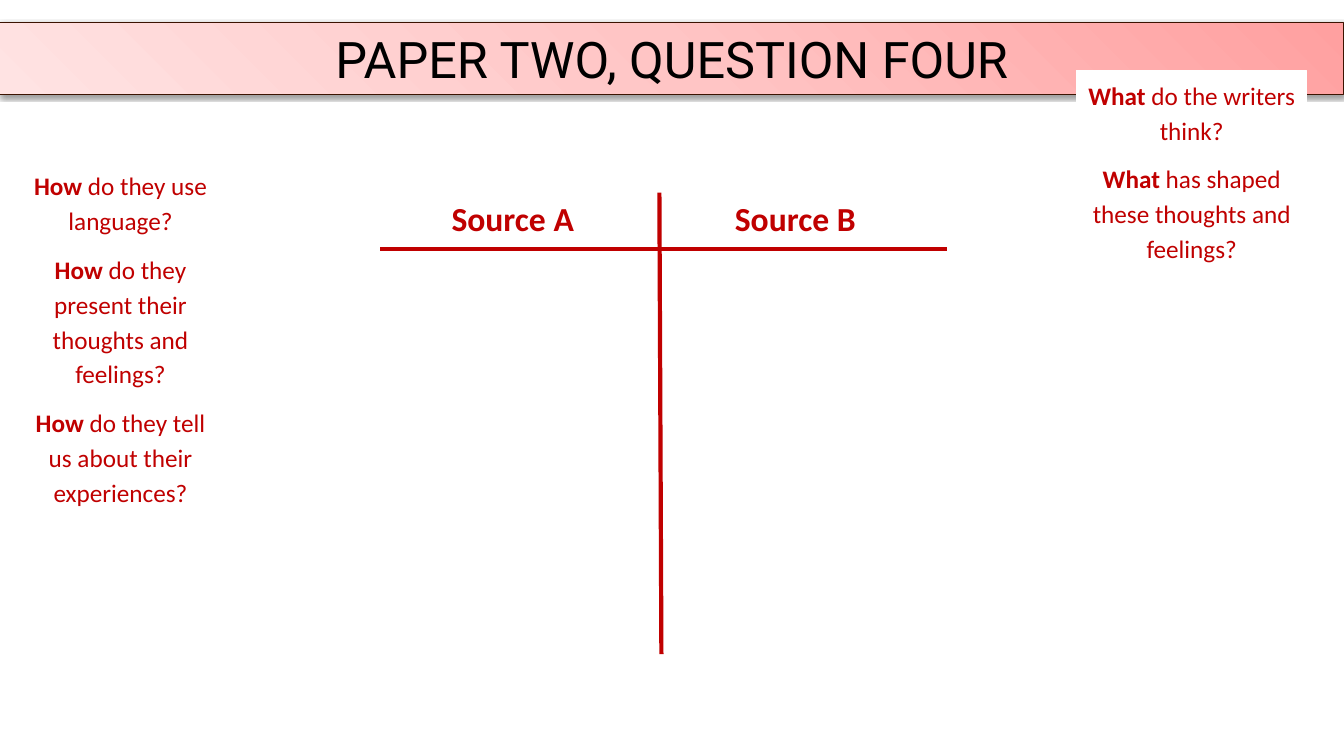
"""Build the Paper Two, Question Four comparison slide."""
import pptx
import pptx.dml.color
import pptx.enum.shapes
import pptx.enum.text
import pptx.oxml
import pptx.oxml.ns
import pptx.util
from lxml import etree

Inches = pptx.util.Inches
Pt = pptx.util.Pt
Align = pptx.enum.text.PP_ALIGN
Anchor = pptx.enum.text.MSO_ANCHOR

RED, WHITE, BLACK, BROWN = "C00000", "FFFFFF", "000000", "3C1301"
TITLE = "PAPER TWO, QUESTION FOUR"
TITLE_AREA = (0, 0.22, 13.33, 0.72)
GRADIENT = [(0, "FFA0A0"), (50, "FFC5C5"), (100, "FFE3E3")]
CHART_LINES = [(6.54, 1.91, 6.56, 6.49), (3.77, 2.47, 9.39, 2.47)]
HEADINGS = [("Source A", 4.38), ("Source B", 7.19)]
HEADING_TOP, HEADING_WIDTH, HEADING_HEIGHT = 1.91, 1.99, 0.5
QUESTIONS = [
    ((0.17, 1.6, 2.05, 3.48), "How", [
        " do they use language?",
        " do they present their thoughts and feelings?",
        " do they tell us about their experiences?",
    ]),
    ((10.68, 0.7, 2.28, 2.01), "What", [
        " do the writers think?",
        " has shaped these thoughts and feelings?",
    ]),
]

TITLE_FONT = {"name": "Roboto", "size": Pt(36), "bold": False}
HEADING_FONT = {"name": "Calibri", "size": Pt(24), "bold": True}
STRONG_FONT = {"name": "Calibri", "size": Pt(18), "bold": True}
PLAIN_FONT = {**STRONG_FONT, "bold": False}
CENTRED = {"alignment": Align.CENTER}
LEFT = {"alignment": Align.LEFT}
QUESTION_FORMAT = {**CENTRED, "line_spacing": 1.15, "space_after": Pt(10)}


def color(value):
    return pptx.dml.color.RGBColor.from_string(value)


def apply(target, values):
    for name, value in values.items():
        setattr(target, name, value)


def add_box(page, area, line_color, line_width, anchor, paragraphs, layout, text_color):
    box = page.shapes.add_shape(
        pptx.enum.shapes.MSO_SHAPE.RECTANGLE, *map(Inches, area))
    box.shadow.inherit = False
    box.line.color.rgb = color(line_color)
    box.line.width = Pt(line_width)
    frame = box.text_frame
    apply(frame, {"word_wrap": True, "vertical_anchor": anchor})
    for index, spans in enumerate(paragraphs):
        para = frame.add_paragraph() if index else frame.paragraphs[0]
        apply(para, layout)
        for text, font in spans:
            span = para.add_run()
            span.text = text
            apply(span.font, font)
            span.font.color.rgb = color(text_color)
    return box


def add_title(page):
    banner = add_box(page, TITLE_AREA, BROWN, 0.75, Anchor.MIDDLE,
                     [[(TITLE, TITLE_FONT)]], CENTRED, BLACK)
    banner.fill.gradient()
    banner.fill.gradient_angle = 225
    properties = banner.element.spPr
    stops = properties.find(".//" + pptx.oxml.ns.qn("a:gsLst"))
    for stop in list(stops):
        stops.remove(stop)
    for position, shade in GRADIENT:
        stop = etree.SubElement(stops, pptx.oxml.ns.qn("a:gs"), pos=str(position * 1000))
        etree.SubElement(stop, pptx.oxml.ns.qn("a:srgbClr"), val=shade)
    effects = properties.find(pptx.oxml.ns.qn("a:effectLst"))
    shadow = etree.SubElement(
        effects, pptx.oxml.ns.qn("a:outerShdw"), blurRad=str(Pt(3.1)),
        dist=str(Pt(1.6)), dir="5400000", rotWithShape="0")
    tint = etree.SubElement(shadow, pptx.oxml.ns.qn("a:srgbClr"), val=BLACK)
    etree.SubElement(tint, pptx.oxml.ns.qn("a:alpha"), val="38000")


def add_line(page, ends):
    line = page.shapes.add_connector(
        pptx.enum.shapes.MSO_CONNECTOR.STRAIGHT, *map(Inches, ends))
    line.line.color.rgb = color(RED)
    line.line.width = Pt(3)
    etree.SubElement(line.element.spPr, pptx.oxml.ns.qn("a:effectLst"))


def main():
    deck = pptx.Presentation()
    apply(deck, {"slide_width": Inches(13.33), "slide_height": Inches(7.5)})
    page = deck.slides.add_slide(deck.slide_layouts[6])
    add_title(page)
    for ends in CHART_LINES:
        add_line(page, ends)
    for heading, left in HEADINGS:
        area = (left, HEADING_TOP, HEADING_WIDTH, HEADING_HEIGHT)
        box = add_box(page, area, WHITE, 0.75, Anchor.TOP,
                      [[(heading, HEADING_FONT)]], LEFT, RED)
        box.fill.background()
    for area, opener, endings in QUESTIONS:
        paragraphs = [[(opener, STRONG_FONT), (ending, PLAIN_FONT)] for ending in endings]
        box = add_box(page, area, WHITE, 0.5, Anchor.TOP, paragraphs, QUESTION_FORMAT, RED)
        box.fill.solid()
        box.fill.fore_color.rgb = color(WHITE)
    deck.save("out.pptx")


if __name__ == "__main__":
    main()
